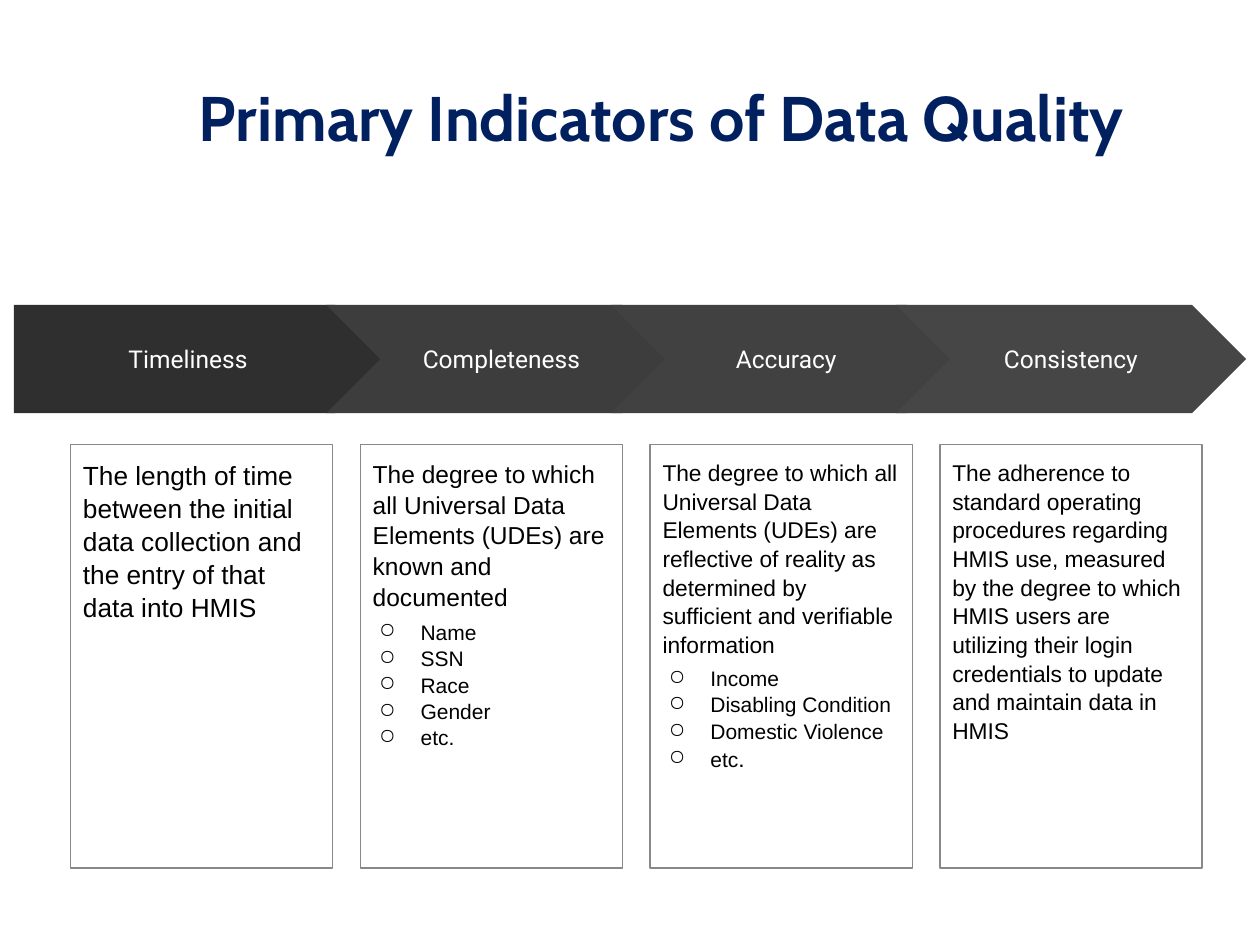
import pptx
import pptx.util
import pptx.dml.color
import pptx.enum.shapes
import pptx.enum.text
import pptx.oxml.ns
from lxml import etree

Inches, Pt = pptx.util.Inches, pptx.util.Pt
SHAPE = pptx.enum.shapes.MSO_SHAPE
ALIGN = pptx.enum.text.PP_ALIGN
ANCHOR = pptx.enum.text.MSO_ANCHOR
qn = pptx.oxml.ns.qn

COLORS = {"title": "002060", "border": "888888", "text": "000000", "label": "FFFFFF"}
TITLE = "Primary Indicators of Data Quality"

# Each bullet is a list of (text, size) runs.
INDICATORS = [
    {"name": "Timeliness", "fill": "2F2F2F", "left": 0.11, "size": 15,
     "text": "The length of time between the initial data collection "
             "and the entry of that data into HMIS",
     "bullets": []},
    {"name": "Completeness", "fill": "3D3D3D", "left": 2.59, "size": 14,
     "text": "The degree to which all Universal Data Elements (UDEs) "
             "are known and documented",
     "bullets": [[("Name", 12)], [("SSN", 12)], [("Race", 12)],
                 [("Gender", 12)], [("etc.", 12)]]},
    {"name": "Accuracy", "fill": "414141", "left": 4.85, "size": 13,
     "text": "The degree to which all Universal Data Elements (UDEs) are reflective "
             "of reality as determined by sufficient and verifiable information",
     "bullets": [[("Income", 12)], [("Disabling Condition", 12)],
                 [("Domestic Violence", 12)], [("etc", 12), (".", 13)]]},
    {"name": "Consistency", "fill": "464646", "left": 7.11, "size": 13,
     "text": "The adherence to standard operating procedures regarding HMIS use, "
             "measured by the degree to which HMIS users are utilizing their login "
             "credentials to update and maintain data in HMIS",
     "bullets": []},
]

ARROW_TOP, ARROW_HEIGHT = 2.42, 0.86
FIRST_ARROW_WIDTH, ARROW_WIDTH = 2.98, 2.78
BOX_LEFT, BOX_TOP, BOX_WIDTH, BOX_HEIGHT = 0.56, 3.53, 2.08, 3.36
BOX_STEP = 2.3


def rgb(name):
    return pptx.dml.color.RGBColor.from_string(COLORS.get(name, name))


def add_run(p, text, font, size, color, bold=False):
    r = p.add_run()
    r.text = text
    r.font.name, r.font.size, r.font.bold = font, Pt(size), bold
    r.font.color.rgb = rgb(color)


def add_panel(s, kind, left, top, width, height, anchor):
    sp = s.shapes.add_shape(kind, Inches(left), Inches(top), Inches(width), Inches(height))
    sp.shadow.inherit = False
    tf = sp.text_frame
    tf.word_wrap = True
    tf.vertical_anchor = anchor
    tf.margin_left = tf.margin_right = tf.margin_top = tf.margin_bottom = Inches(0.1)
    return sp


def set_bullet(p):
    p.level = 1
    pPr = p._p.get_or_add_pPr()
    pPr.set("marL", str(Inches(0.38)))
    pPr.set("indent", str(Inches(-0.33)))
    color = etree.SubElement(pPr, qn("a:buClr"))
    etree.SubElement(color, qn("a:srgbClr"), val=COLORS["text"])
    etree.SubElement(pPr, qn("a:buChar"), char="○")


def add_title(s):
    title = s.shapes.title
    title.left, title.top, title.width, title.height = map(Inches, (0.5, 0.3, 9, 1.25))
    title.text_frame.vertical_anchor = ANCHOR.MIDDLE
    p = title.text_frame.paragraphs[0]
    p.alignment = ALIGN.CENTER
    p._p.get_or_add_pPr().set("marL", str(Inches(0.5)))
    add_run(p, TITLE, "Cabin", 36, "title", bold=True)


def add_arrow(s, item, first):
    kind = SHAPE.PENTAGON if first else SHAPE.CHEVRON
    width = FIRST_ARROW_WIDTH if first else ARROW_WIDTH
    sp = add_panel(s, kind, item["left"], ARROW_TOP, width, ARROW_HEIGHT, ANCHOR.MIDDLE)
    sp.adjustments[0] = 0.5
    sp.fill.solid()
    sp.fill.fore_color.rgb = rgb(item["fill"])
    sp.line.fill.background()
    p = sp.text_frame.paragraphs[0]
    p.alignment = ALIGN.CENTER
    add_run(p, item["name"], "Roboto", 14, "label")


def add_definition(s, item, left):
    sp = add_panel(s, SHAPE.RECTANGLE, left, BOX_TOP, BOX_WIDTH, BOX_HEIGHT, ANCHOR.TOP)
    sp.fill.background()
    sp.line.color.rgb = rgb("border")
    sp.line.width = Pt(0.75)
    tf = sp.text_frame
    p = tf.paragraphs[0]
    p.alignment, p.line_spacing = ALIGN.LEFT, 1.05
    add_run(p, item["text"], "Arial", item["size"], "text")
    for i, runs in enumerate(item["bullets"]):
        p = tf.add_paragraph()
        set_bullet(p)
        p.alignment, p.line_spacing = ALIGN.LEFT, 1.05
        p.space_before = Pt(0 if i else 3.6)
        for text, size in runs:
            add_run(p, text, "Arial", size, "text")


def main():
    prs = pptx.Presentation()
    prs.slide_width, prs.slide_height = Inches(10), Inches(7.5)
    s = prs.slides.add_slide(prs.slide_layouts[5])
    add_title(s)
    for i, item in enumerate(INDICATORS):
        add_arrow(s, item, first=i == 0)
        add_definition(s, item, BOX_LEFT + i * BOX_STEP)
    prs.save("out.pptx")


if __name__ == "__main__":
    main()
